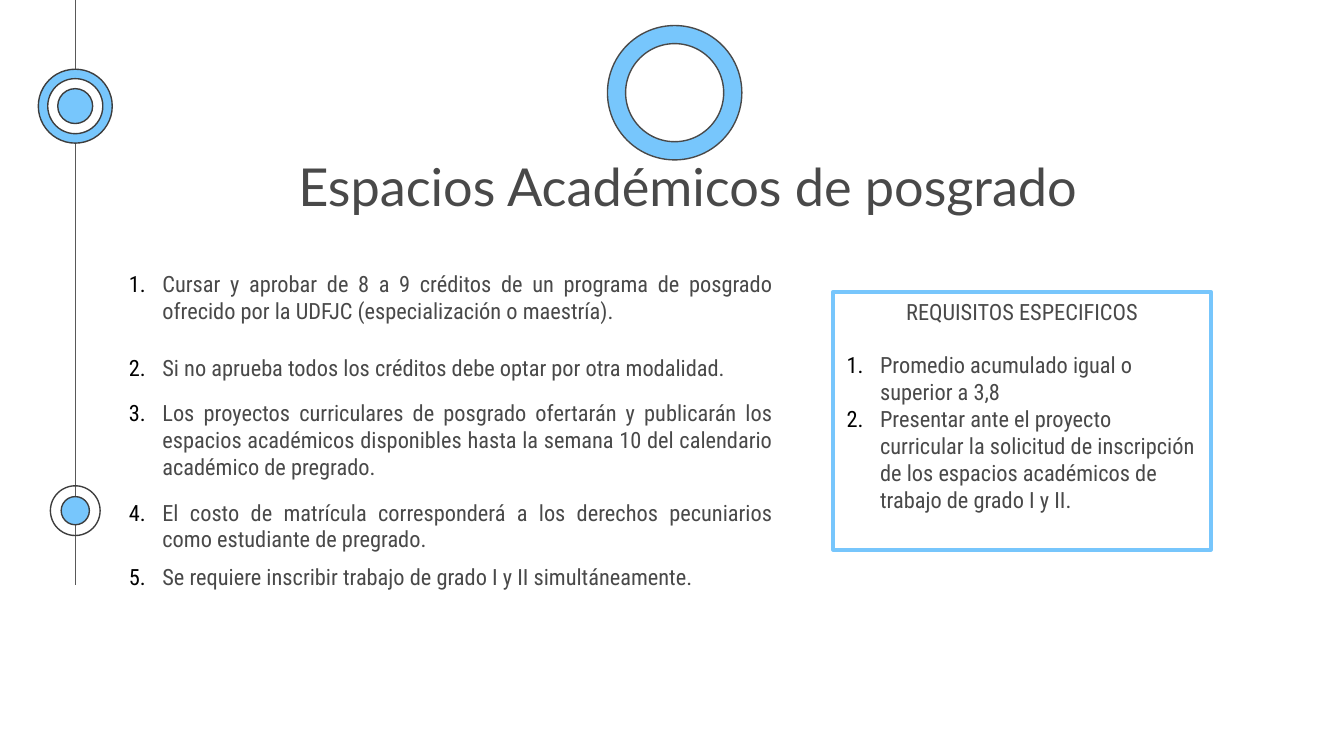
from lxml import etree
from pptx import Presentation
from pptx.dml.color import RGBColor
from pptx.enum import shapes, text
from pptx.oxml import ns
from pptx.util import Inches, Pt

BLUE = RGBColor(0x77, 0xC6, 0xFC)
WHITE = RGBColor(0xFF, 0xFF, 0xFF)
INK = RGBColor(0x49, 0x49, 0x49)
DARK = RGBColor(0x3D, 0x3D, 0x3D)
GREY = RGBColor(0x59, 0x59, 0x59)
BODY = "Roboto Condensed"
ALIGN = text.PP_ALIGN

# Text, space before and space after in points
RULES = [
    ("Cursar y aprobar de 8 a 9 créditos de un programa de posgrado "
     "ofrecido por la UDFJC (especialización o maestría).", 6, 10),
    ("Si no aprueba todos los créditos debe optar por otra modalidad.", 6, 10),
    ("Los proyectos curriculares de posgrado ofertarán y publicarán los "
     "espacios académicos disponibles hasta la semana 10 del calendario "
     "académico de pregrado.", 0, 10),
    ("El costo de matrícula corresponderá a los derechos pecuniarios "
     "como estudiante de pregrado.", 0, 0),
    ("Se requiere inscribir trabajo de grado I y II simultáneamente.", 6, 0),
]
NEEDS = [
    "Promedio acumulado igual o superior a 3,8",
    "Presentar ante el proyecto curricular la solicitud de inscripción "
    "de los espacios académicos de trabajo de grado I y II.",
]


def add_shape(slide, kind, box, fill, color, width=0.75):
    shape = slide.shapes.add_shape(kind, *map(Inches, box))
    shape.shadow.inherit = False
    if fill is None:
        shape.fill.background()
    else:
        shape.fill.solid()
        shape.fill.fore_color.rgb = fill
    shape.line.color.rgb = color
    shape.line.width = Pt(width)
    return shape


def add_disc(slide, x, y, size, fill, color=DARK):
    box = (x - size / 2, y - size / 2, size, size)
    add_shape(slide, shapes.MSO_SHAPE.OVAL, box, fill, color)


def add_line(slide, x, top, bottom):
    line = slide.shapes.add_connector(
        shapes.MSO_CONNECTOR.STRAIGHT,
        Inches(x), Inches(top), Inches(x), Inches(bottom))
    line.line.color.rgb = GREY
    line.line.width = Pt(0.75)
    etree.SubElement(line._element.spPr, ns.qn("a:effectLst"))


def add_box(slide, box):
    frame = slide.shapes.add_textbox(*map(Inches, box)).text_frame
    frame.word_wrap = True
    frame.margin_left = frame.margin_right = Inches(0.1)
    frame.margin_top = frame.margin_bottom = Inches(0.1)
    return frame


def write(para, words, align, size=12, font=BODY, before=0, after=0):
    para.text = words
    para.alignment = align
    para.space_before, para.space_after = Pt(before), Pt(after)
    for run in para.runs:
        run.font.size = Pt(size)
        run.font.name = font
        run.font.color.rgb = INK


def number(para):
    props = para._p.get_or_add_pPr()
    props.set("marL", str(Inches(0.25)))
    props.set("indent", str(-Inches(0.25)))
    tint = etree.SubElement(props, ns.qn("a:buClr"))
    etree.SubElement(tint, ns.qn("a:srgbClr"), val="000000")
    etree.SubElement(props, ns.qn("a:buAutoNum"), type="arabicPeriod")


def main():
    # Slide in 16:9
    deck = Presentation()
    deck.slide_width = Inches(10)
    deck.slide_height = Inches(10) * 9 // 16
    slide = deck.slides.add_slide(deck.slide_layouts[6])

    # Timeline at the left
    axis = 0.56
    add_line(slide, axis, 0, 4.35)
    for y, size, fill in [(3.8, 0.37, None), (3.8, 0.21, BLUE),
                          (0.79, 0.55, BLUE), (0.79, 0.41, WHITE),
                          (0.79, 0.26, BLUE)]:
        add_disc(slide, axis, y, size, fill)

    # Ring above the title
    for size, fill in [(1, BLUE), (0.73, WHITE)]:
        add_disc(slide, 5.02, 0.69, size, fill, INK)

    # Title
    title = add_box(slide, (2.04, 1.05, 6.15, 0.63))
    write(title.paragraphs[0], "Espacios Académicos de posgrado",
          ALIGN.CENTER, 28, "Lato")

    # Numbered rules
    rules = add_box(slide, (0.86, 1.91, 4.99, 3.25))
    for i, (words, before, after) in enumerate(RULES):
        para = rules.add_paragraph() if i else rules.paragraphs[0]
        write(para, words, ALIGN.JUSTIFY, before=before, after=after)
        number(para)

    # Specific requirements
    panel = add_shape(slide, shapes.MSO_SHAPE.RECTANGLE,
                      (6.2, 2.17, 2.81, 1.92), WHITE, BLUE, 2)
    frame = panel.text_frame
    frame.word_wrap = True
    frame.vertical_anchor = text.MSO_ANCHOR.TOP
    write(frame.paragraphs[0], "REQUISITOS ESPECIFICOS", ALIGN.CENTER,
          after=14)
    for words in NEEDS:
        para = frame.add_paragraph()
        write(para, words, ALIGN.LEFT)
        number(para)

    deck.save("out.pptx")


if __name__ == "__main__":
    main()
